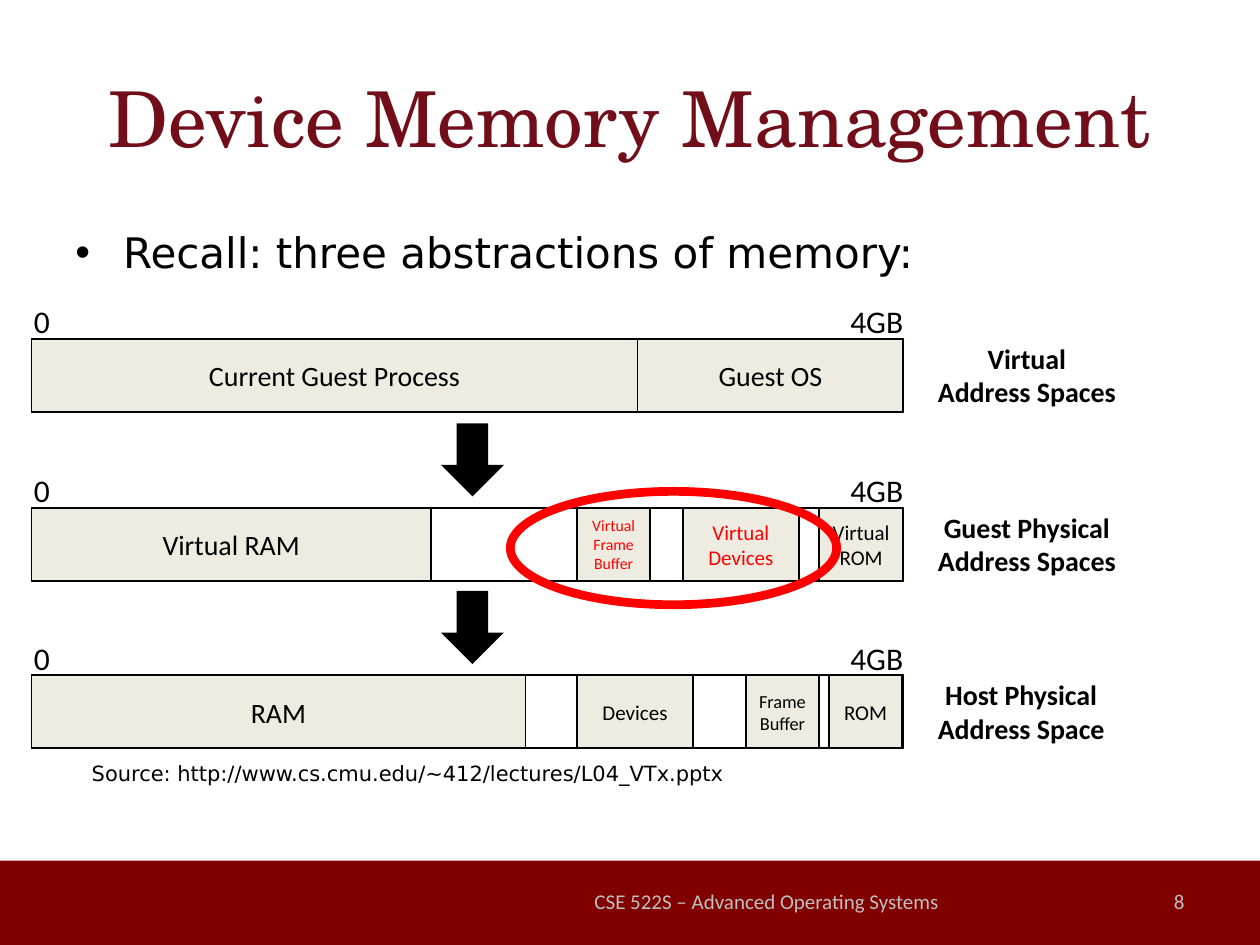
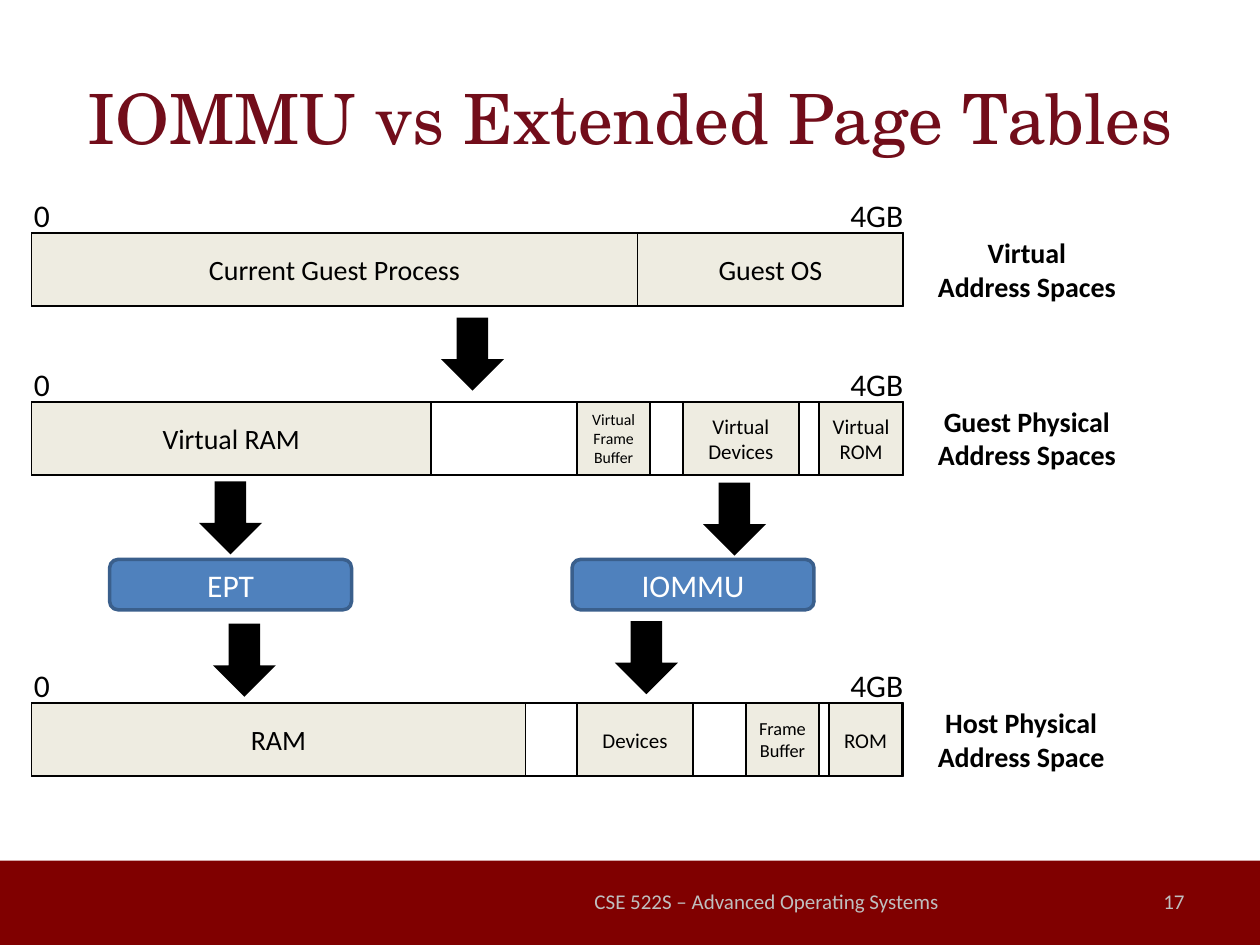
import pptx
import pptx.util
import pptx.dml.color
import pptx.enum.shapes
import pptx.enum.text
import pptx.oxml
import pptx.oxml.ns

Inches = pptx.util.Inches
Pt = pptx.util.Pt
RGBColor = pptx.dml.color.RGBColor
SHAPE = pptx.enum.shapes.MSO_SHAPE
ALIGN = pptx.enum.text.PP_ALIGN
ANCHOR = pptx.enum.text.MSO_ANCHOR

BLACK = RGBColor(0x00, 0x00, 0x00)
WHITE = RGBColor(0xFF, 0xFF, 0xFF)
RED = RGBColor(0xFF, 0x00, 0x00)
MAROON = RGBColor(0x80, 0x00, 0x00)
TITLE_RED = RGBColor(0x72, 0x0D, 0x1A)
CREAM = RGBColor(0xEE, 0xEC, 0xE1)
BLUE = RGBColor(0x4F, 0x81, 0xBD)
DARK_BLUE = RGBColor(0x3A, 0x5F, 0x8C)
GREY = RGBColor(0xBF, 0xBF, 0xBF)

BODY_FONT = "Calibri"
TITLE_FONT = "TeX Gyre Schola"
PLAIN_FONT = "DejaVu Sans"

COURSE = "CSE 522S – Advanced Operating Systems"

BAR_LEFT, BAR_WIDTH, BAR_HEIGHT = 0.25, 6.92, 0.58
ARROW_SIZE = (0.5, 0.58)
UNIT_SIZE = (1.92, 0.4)

# Each segment: text, left, width, font size
ADDRESS_SPACES = [
    {"caption": "Virtual\nAddress Spaces", "caption_width": 1.64,
     "segments": [("Current Guest Process", 0.25, 4.81, 16),
                  ("Guest OS", 5.06, 2.11, 16)]},
    {"caption": "Guest Physical\nAddress Spaces", "caption_width": 1.64,
     "segments": [("Virtual RAM", 0.25, 3.17, 16),
                  ("Virtual\nFrame\nBuffer", 4.58, 0.58, 9),
                  ("Virtual\nDevices", 5.42, 0.92, 12),
                  ("Virtual\nROM", 6.5, 0.67, 12)]},
    {"caption": "Host Physical\nAddress Space", "caption_width": 1.55,
     "segments": [("RAM", 0.25, 3.92, 16),
                  ("Devices", 4.58, 0.92, 12),
                  ("Frame\nBuffer", 5.92, 0.58, 10.5),
                  ("ROM", 6.58, 0.58, 12)]},
]

SLIDES = [
    {"title": "Device Memory Management", "title_size": 44, "number": "8",
     "bullet": "Recall: three abstractions of memory:",
     "bar_tops": [2.69, 4.03, 5.36],
     "arrows": [(3.5, 3.36), (3.5, 4.69)],
     "units": [],
     "highlighted": ["Virtual\nFrame\nBuffer", "Virtual\nDevices"],
     "ring": (4.05, 3.9, 2.59, 0.9),
     "source": "Source: http://www.cs.cmu.edu/~412/lectures/L04_VTx.pptx"},
    {"title": "IOMMU vs Extended Page Tables", "title_size": 39.6, "number": "17",
     "bar_tops": [1.85, 3.19, 5.58],
     "arrows": [(3.5, 2.52), (1.58, 3.82), (1.69, 4.95), (5.58, 3.83), (4.88, 4.93)],
     "units": [("EPT", 0.87, 4.44), ("IOMMU", 4.54, 4.44)],
     "highlighted": []},
]


def write(part, text, size=18, color=BLACK, font=BODY_FONT, bold=False,
          align=ALIGN.LEFT, anchor=ANCHOR.TOP, wrap=True, inset=None, bullet=None):
    frame = part.text_frame
    frame.word_wrap = wrap
    frame.vertical_anchor = anchor
    if inset is not None:
        frame.margin_left = frame.margin_right = Inches(inset)
    for index, line in enumerate(text.split("\n")):
        paragraph = frame.add_paragraph() if index else frame.paragraphs[0]
        paragraph.alignment = align
        if bullet:
            properties = paragraph._p.get_or_add_pPr()
            properties.set("marL", str(Inches(0.38)))
            properties.set("indent", str(-Inches(0.38)))
            face = pptx.oxml.parse_xml(
                f'<a:buFont {pptx.oxml.ns.nsdecls("a")} typeface="Arial"/>')
            mark = pptx.oxml.parse_xml(
                f'<a:buChar {pptx.oxml.ns.nsdecls("a")} char="{bullet}"/>')
            properties.extend([face, mark])
        run = paragraph.add_run()
        run.text = line
        run.font.size = Pt(size)
        run.font.name = font
        run.font.bold = bold
        run.font.color.rgb = color


def add_text(slide, box, text, **style):
    write(slide.shapes.add_textbox(*map(Inches, box)), text, **style)


def add_block(slide, kind, box, fill=None, line=None, line_width=1):
    block = slide.shapes.add_shape(kind, *map(Inches, box))
    block.shadow.inherit = False
    if fill is None:
        block.fill.background()
    else:
        block.fill.solid()
        block.fill.fore_color.rgb = fill
    if line is None:
        block.line.fill.background()
    else:
        block.line.color.rgb = line
        block.line.width = Pt(line_width)
    return block


def add_frame(slide, content):
    add_block(slide, SHAPE.RECTANGLE, (0, 6.83, 10, 0.67), fill=MAROON)
    add_text(slide, (0.5, 0.3, 9, 1.25), content["title"], size=content["title_size"],
             color=TITLE_RED, font=TITLE_FONT, align=ALIGN.CENTER, anchor=ANCHOR.MIDDLE)
    footer = {"size": 12, "color": GREY, "anchor": ANCHOR.MIDDLE}
    add_text(slide, (4.5, 6.95, 3.17, 0.4), COURSE, align=ALIGN.CENTER, **footer)
    add_text(slide, (7.17, 6.95, 2.33, 0.4), content["number"], align=ALIGN.RIGHT, **footer)


def add_address_space(slide, space, top, highlighted):
    add_block(slide, SHAPE.RECTANGLE, (BAR_LEFT, top, BAR_WIDTH, BAR_HEIGHT),
              fill=WHITE, line=BLACK)
    for text, left, width, size in space["segments"]:
        segment = add_block(slide, SHAPE.RECTANGLE, (left, top, width, BAR_HEIGHT),
                            fill=CREAM, line=BLACK)
        write(segment, text, size=size, color=RED if text in highlighted else BLACK,
              align=ALIGN.CENTER, anchor=ANCHOR.MIDDLE, inset=0)
    for bound, left, width in (("0", 0.17, 0.33), ("4GB", 6.65, 0.63)):
        add_text(slide, (left, top - 0.34, width, 0.4), bound, wrap=False)
    add_text(slide, (7.33, top - 0.03, space["caption_width"], 0.64), space["caption"],
             size=16, bold=True, align=ALIGN.CENTER, wrap=False)


def build_slide(deck, content):
    slide = deck.slides.add_slide(deck.slide_layouts[6])
    add_frame(slide, content)
    if "bullet" in content:
        add_text(slide, (0.5, 1.75, 9, 0.6), content["bullet"], size=24,
                 font=PLAIN_FONT, bullet="•")
    for space, top in zip(ADDRESS_SPACES, content["bar_tops"]):
        add_address_space(slide, space, top, content["highlighted"])
    for position in content["arrows"]:
        add_block(slide, SHAPE.DOWN_ARROW, position + ARROW_SIZE, fill=BLACK)
    for name, left, top in content["units"]:
        unit = add_block(slide, SHAPE.ROUNDED_RECTANGLE, (left, top) + UNIT_SIZE,
                         fill=BLUE, line=DARK_BLUE, line_width=2)
        write(unit, name, color=WHITE, align=ALIGN.CENTER, anchor=ANCHOR.MIDDLE)
    if "source" in content:
        add_text(slide, (0.63, 5.99, 6.16, 0.3), content["source"], size=12, font=PLAIN_FONT)
    if "ring" in content:
        add_block(slide, SHAPE.OVAL, content["ring"], line=RED, line_width=5)


def main():
    deck = pptx.Presentation()
    deck.slide_width, deck.slide_height = Inches(10), Inches(7.5)
    for content in SLIDES:
        build_slide(deck, content)
    deck.save("out.pptx")


if __name__ == "__main__":
    main()
